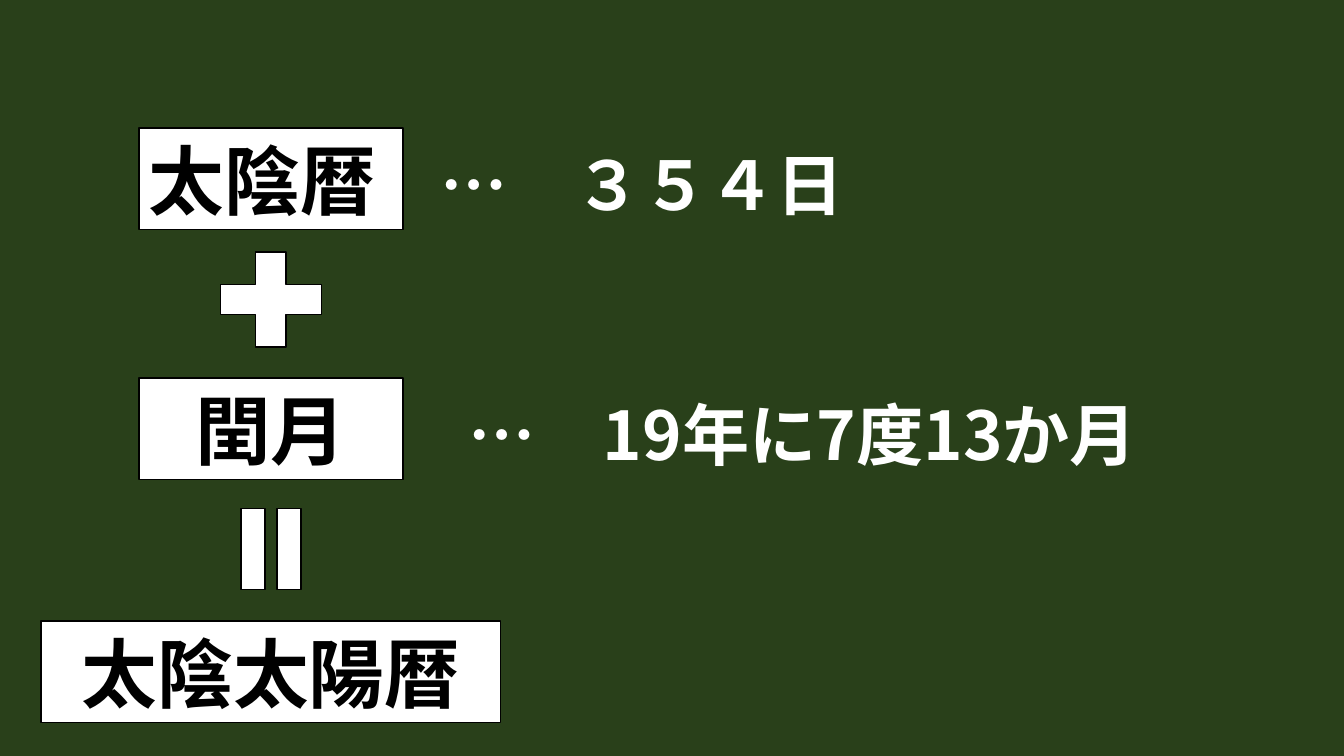
from lxml import etree
from pptx import Presentation
from pptx.dml.color import RGBColor
from pptx.enum import shapes, text
from pptx.oxml.ns import qn
from pptx.util import Pt

FONT = "Noto Sans CJK JP"
COLORS = {"board": "29401A", "chalk": "FFFFFF", "ink": "000000"}
LEFT, CENTER = text.PP_ALIGN.LEFT, text.PP_ALIGN.CENTER
MID = 193.5
CARD_H, NOTE_W, NOTE_H = 72.7, 607.7, 65.5

cards = [
    ("太陰暦", 91.4, 188.6, LEFT),
    ("閏月", 270, 188.6, CENTER),
    ("太陰太陽暦", 443.5, 328.3, CENTER),
]
notes = [
    ("…\u3000３５４日".replace("\u3000", "　"), 307.4, 98.6),
    ("…　19年に7度13か月", 327.6, 277.2),
]
signs = [
    (shapes.MSO_SHAPE.MATH_PLUS, 167.8, 97.9, 92.2, 0),
    (shapes.MSO_SHAPE.MATH_EQUAL, 355.7, 78.5, 72.7, 90),
]


def color(key):
    return RGBColor.from_string(COLORS[key])


def write(shape, words, size, key, align):
    frame = shape.text_frame
    frame.word_wrap = True
    frame.auto_size = text.MSO_AUTO_SIZE.NONE
    frame.vertical_anchor = text.MSO_ANCHOR.MIDDLE
    para = frame.paragraphs[0]
    para.text = words
    para.alignment = align
    font = para.runs[0].font
    font.name, font.size, font.bold = FONT, Pt(size), True
    font.color.rgb = color(key)
    east = etree.SubElement(para.runs[0]._r.rPr, qn("a:ea"))
    east.set("typeface", FONT)


def block(slide, kind, top, width, height):
    shape = slide.shapes.add_shape(
        kind, Pt(MID - width / 2), Pt(top), Pt(width), Pt(height))
    shape.shadow.inherit = False
    shape.fill.solid()
    shape.fill.fore_color.rgb = color("chalk")
    shape.line.color.rgb = color("ink")
    shape.line.width = Pt(1)
    return shape


def main():
    deck = Presentation()
    deck.slide_width, deck.slide_height = Pt(960), Pt(540)
    slide = deck.slides.add_slide(deck.slide_layouts[6])
    slide.background.fill.solid()
    slide.background.fill.fore_color.rgb = color("board")

    for words, left, top in notes:
        box = slide.shapes.add_textbox(Pt(left), Pt(top), Pt(NOTE_W), Pt(NOTE_H))
        write(box, words, 48, "chalk", LEFT)
    for words, top, width, align in cards:
        card = block(slide, shapes.MSO_SHAPE.RECTANGLE, top, width, CARD_H)
        write(card, words, 54, "ink", align)
    for kind, top, width, height, turn in signs:
        block(slide, kind, top, width, height).rotation = turn

    deck.save("out.pptx")


if __name__ == "__main__":
    main()
